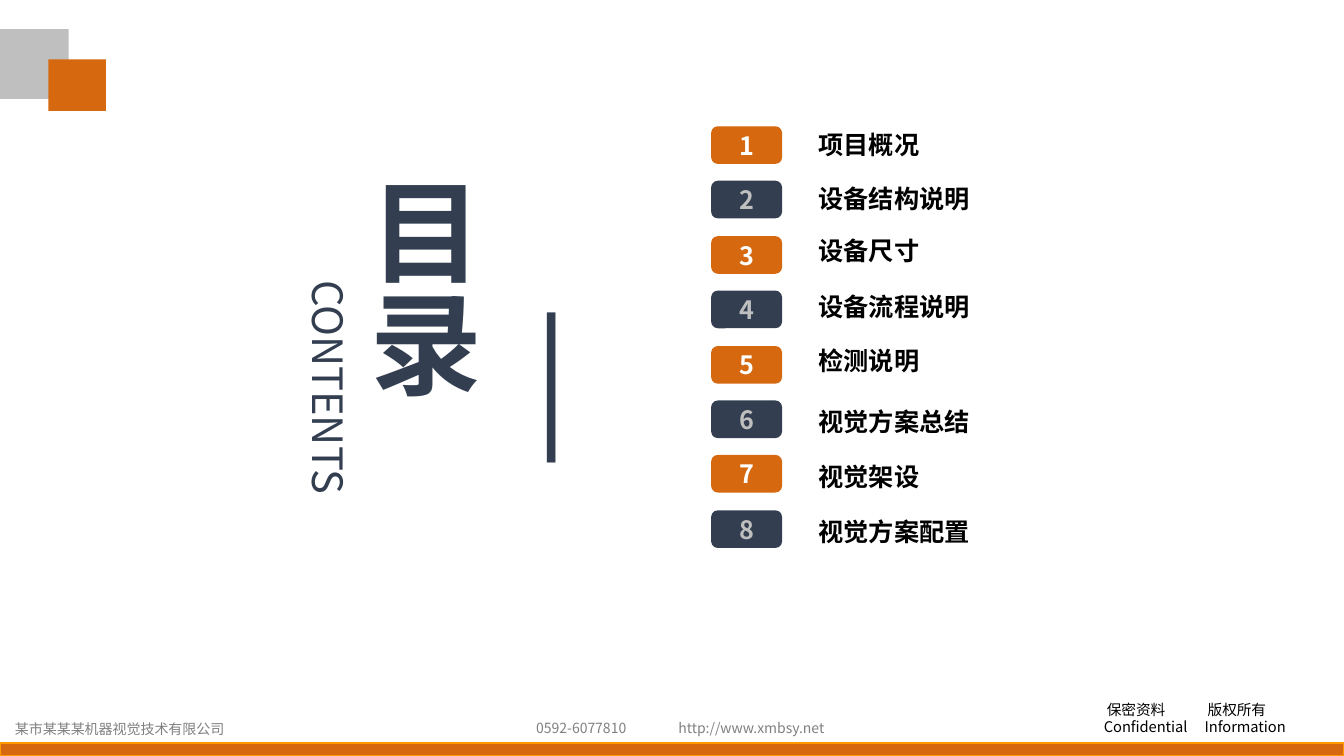
from dataclasses import dataclass
from typing import Optional

from lxml.etree import SubElement
from pptx import Presentation
from pptx.dml.color import RGBColor
from pptx.enum.shapes import MSO_SHAPE
from pptx.enum.text import MSO_ANCHOR, MSO_AUTO_SIZE, PP_ALIGN
from pptx.oxml.ns import qn
from pptx.util import Pt

PX = 9144


@dataclass(frozen=True)
class Theme:
    font: str = "Noto Sans CJK SC"
    orange: str = "D6680F"
    amber: str = "FF9900"
    navy: str = "333F50"
    silver: str = "BFBFBF"
    grey: str = "808080"
    black: str = "000000"
    white: str = "FFFFFF"
    title: float = 79.9
    subtitle: float = 29.8
    bar: float = 96
    item: float = 18
    notice: float = 10.5
    footer: float = 10


@dataclass(frozen=True)
class Box:
    x: int
    y: int
    w: int
    h: int

    def emu(self) -> tuple:
        return tuple(v * PX for v in (self.x, self.y, self.w, self.h))


@dataclass(frozen=True)
class Style:
    size: float
    color: str
    bold: bool = False
    centered: bool = False


@dataclass(frozen=True)
class Item:
    label: str
    label_y: int


@dataclass(frozen=True)
class Footer:
    text: str
    box: Box


T = Theme()
ITEMS = (
    Item("项目概况", 123),
    Item("设备结构说明", 177),
    Item("设备尺寸", 229),
    Item("设备流程说明", 284),
    Item("检测说明", 338),
    Item("视觉方案总结", 398),
    Item("视觉架设", 453),
    Item("视觉方案配置", 507),
)
FOOTERS = (
    Footer("http://www.xmbsy.net", Box(663, 709, 167, 27)),
    Footer("0592-6077810", Box(522, 709, 120, 27)),
    Footer("某市某某某机器视觉技术有限公司", Box(5, 710, 235, 27)),
)


def add_run(p, text: str, style: Style) -> None:
    """Append one styled run to a paragraph."""
    if style.centered:
        p.alignment = PP_ALIGN.CENTER
    r = p.add_run()
    r.text = text
    r.font.size = Pt(style.size)
    r.font.bold = style.bold
    r.font.name = T.font
    r.font.color.rgb = RGBColor.from_string(style.color)
    SubElement(r._r.get_or_add_rPr(), qn("a:ea")).set("typeface", T.font)


def add_block(s, kind, box: Box, fill: str, line: Optional[str] = None):
    """Draw a flat filled shape with an optional outline."""
    sp = s.shapes.add_shape(kind, *box.emu())
    sp.shadow.inherit = False
    sp.fill.solid()
    sp.fill.fore_color.rgb = RGBColor.from_string(fill)
    if line:
        sp.line.color.rgb = RGBColor.from_string(line)
        sp.line.width = Pt(1)
    else:
        sp.line.fill.background()
    return sp


def clear_insets(tf) -> None:
    """Remove the inner margins of a text frame."""
    tf.margin_left = tf.margin_right = tf.margin_top = tf.margin_bottom = 0


def add_text(s, box: Box, text: str, style: Style, wrap: bool = True):
    """Draw a text box holding one line."""
    sp = s.shapes.add_textbox(*box.emu())
    tf = sp.text_frame
    tf.word_wrap = wrap
    tf.auto_size = MSO_AUTO_SIZE.SHAPE_TO_FIT_TEXT
    add_run(tf.paragraphs[0], text, style)
    return sp


def add_tab(p, indent: int, stop: int) -> None:
    """Give a paragraph a left indent and one tab stop."""
    pPr = p._p.get_or_add_pPr()
    pPr.set("marL", str(indent * PX))
    pPr.set("indent", "0")
    tabs = SubElement(pPr, qn("a:tabLst"))
    SubElement(tabs, qn("a:tab"), pos=str(stop * PX), algn="l")


def add_notice(s) -> None:
    """Draw the two-line confidentiality notice."""
    style = Style(T.notice, T.black)
    sp = s.shapes.add_textbox(*Box(1085, 690, 217, 45).emu())
    tf = sp.text_frame
    tf.word_wrap = True
    tf.auto_size = MSO_AUTO_SIZE.SHAPE_TO_FIT_TEXT
    rows = (("保密资料\t版权所有", 3, 81), ("Confidential\tInformation", 0, 89))
    for i, (text, indent, stop) in enumerate(rows):
        p = tf.add_paragraph() if i else tf.paragraphs[0]
        add_tab(p, indent, stop)
        add_run(p, text, style)


def add_heading(s) -> None:
    """Draw the vertical heading, its translation and the bar."""
    sp = add_block(s, MSO_SHAPE.RECTANGLE, Box(352, 175, 134, 392), T.white)
    tf = sp.text_frame
    tf.word_wrap = True
    tf.auto_size = MSO_AUTO_SIZE.SHAPE_TO_FIT_TEXT
    tf.vertical_anchor = MSO_ANCHOR.MIDDLE
    clear_insets(tf)
    tf._txBody.bodyPr.set("vert", "eaVert")
    add_run(tf.paragraphs[0], "目录", Style(T.title, T.navy, True, True))

    sp = add_text(s, Box(156, 359, 341, 50), "CONTENTS",
                  Style(T.subtitle, T.navy, centered=True))
    clear_insets(sp.text_frame)
    sp.rotation = 90
    add_text(s, Box(519, 284, 51, 172), "|", Style(T.bar, T.navy), wrap=False)


def add_item(s, i: int, item: Item) -> None:
    """Draw one numbered badge with its label."""
    fill, color = ((T.orange, T.white), (T.navy, T.silver))[i % 2]
    box = Box(706, round(126 + 54.4 * i), 69, 36)
    sp = add_block(s, MSO_SHAPE.ROUNDED_RECTANGLE, box, fill, fill)
    sp.text_frame.vertical_anchor = MSO_ANCHOR.MIDDLE
    add_run(sp.text_frame.paragraphs[0], str(i + 1),
            Style(T.item, color, True, True))
    add_text(s, Box(802, item.label_y, 200, 40), item.label,
             Style(T.item, T.black, True))


def main() -> None:
    """Build and save the contents slide."""
    prs = Presentation()
    prs.slide_width, prs.slide_height = 1333 * PX, 750 * PX
    s = prs.slides.add_slide(prs.slide_layouts[6])
    add_block(s, MSO_SHAPE.RECTANGLE, Box(0, 737, 1333, 13), T.orange, T.amber)
    add_notice(s)
    for footer in FOOTERS:
        add_text(s, footer.box, footer.text, Style(T.footer, T.grey))
    add_block(s, MSO_SHAPE.RECTANGLE, Box(0, 29, 68, 69), T.silver)
    add_block(s, MSO_SHAPE.RECTANGLE, Box(48, 59, 57, 51), T.orange)
    add_heading(s)
    for i, item in enumerate(ITEMS):
        add_item(s, i, item)
    prs.save("out.pptx")


if __name__ == "__main__":
    main()
